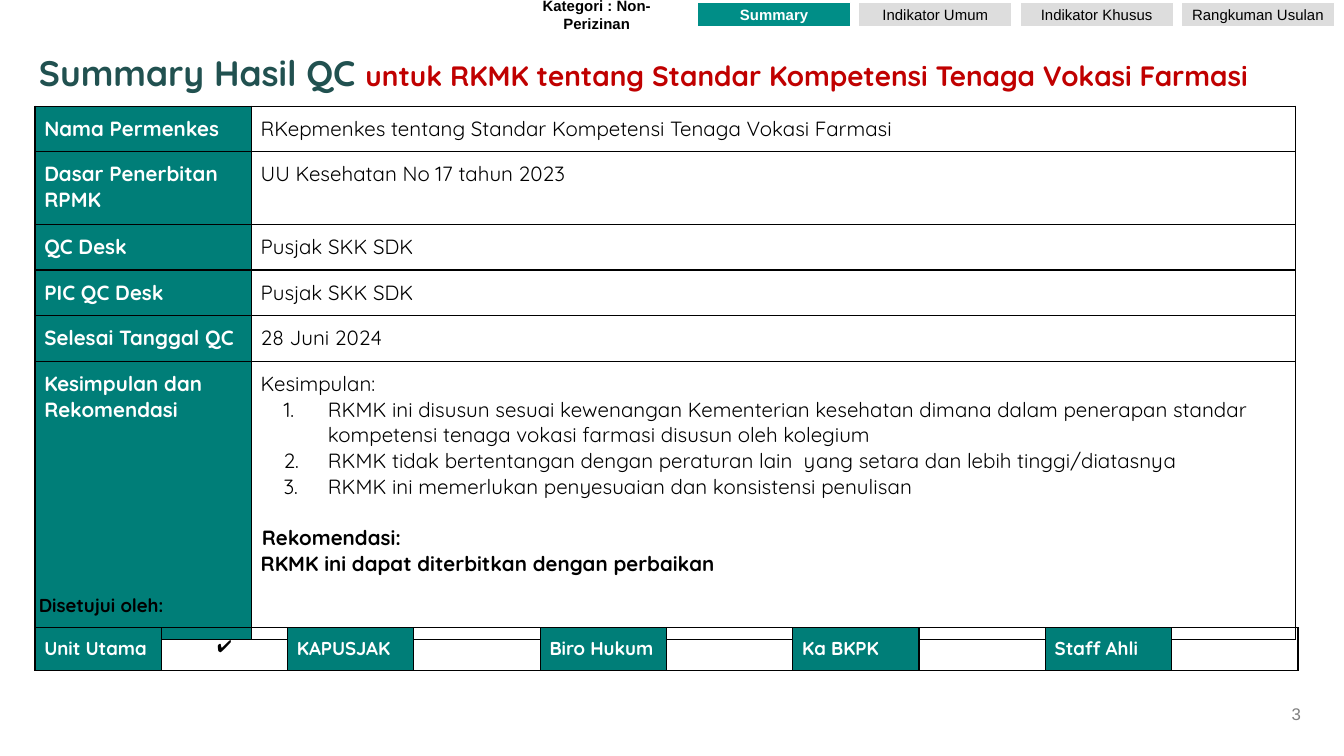
from lxml import etree
from pptx import Presentation
from pptx import util as u
from pptx.dml.color import RGBColor
from pptx.enum import shapes, text
from pptx.oxml import ns

TEAL = "007E78"
BLACK = "000000"
WHITE = "FFFFFF"
LEFT, CENTER, RIGHT = text.PP_ALIGN.LEFT, text.PP_ALIGN.CENTER, text.PP_ALIGN.RIGHT
TOP, MIDDLE, BOTTOM = (text.MSO_ANCHOR.TOP, text.MSO_ANCHOR.MIDDLE,
                       text.MSO_ANCHOR.BOTTOM)


def rgb(hex_color):
    return RGBColor.from_string(hex_color)


def add_run(paragraph, words, size=11, font="Quicksand", color=BLACK, bold=False):
    run = paragraph.add_run()
    run.text = words
    run.font.size = u.Pt(size)
    run.font.name = font
    run.font.bold = bold
    run.font.color.rgb = rgb(color)


def write(frame, words, align=LEFT, numbered=False, indent=0, before=0, **fmt):
    """Append a paragraph, filling the frame's first one if it is empty."""
    first = frame.paragraphs[0]
    paragraph = frame.add_paragraph() if first.runs else first
    paragraph.alignment = align
    if before:
        paragraph.space_before = u.Pt(before)
    props = paragraph._p.get_or_add_pPr()
    if indent:
        props.set("marL", str(u.Inches(indent)))
    if numbered:
        props.set("indent", str(u.Inches(-0.33)))
        etree.SubElement(props, ns.qn("a:buFont"), typeface="+mj-lt")
        etree.SubElement(props, ns.qn("a:buAutoNum"), type="arabicPeriod")
    add_run(paragraph, words, **fmt)
    return paragraph


def set_borders(cell):
    props = cell._tc.get_or_add_tcPr()
    for position, side in enumerate(("lnL", "lnR", "lnT", "lnB")):
        line = etree.Element(ns.qn(f"a:{side}"), w=str(u.Pt(0.75)))
        fill = etree.SubElement(line, ns.qn("a:solidFill"))
        etree.SubElement(fill, ns.qn("a:srgbClr"), val=BLACK)
        props.insert(position, line)


class SlideBuilder:
    def __init__(self, slide, inset=0.07):
        self.slide = slide
        self.inset = inset

    def frame(self, shape, anchor, vertical_inset):
        frame = shape.text_frame
        frame.word_wrap = True
        frame.vertical_anchor = anchor
        frame.margin_left = frame.margin_right = u.Inches(self.inset)
        frame.margin_top = frame.margin_bottom = u.Inches(vertical_inset)
        return frame

    def textbox(self, box, anchor=TOP, vertical_inset=0.07):
        shape = self.slide.shapes.add_textbox(*map(u.Inches, box))
        return self.frame(shape, anchor, vertical_inset)

    def tab(self, box, label, active=False):
        shape = self.slide.shapes.add_shape(
            shapes.MSO_SHAPE.RECTANGLE, *map(u.Inches, box))
        shape.shadow.inherit = False
        shape.fill.solid()
        shape.fill.fore_color.rgb = rgb("008E87" if active else "DDDDDD")
        shape.line.color.rgb = rgb(WHITE)
        shape.line.width = u.Pt(0.75)
        write(self.frame(shape, MIDDLE, self.inset), label, align=CENTER, size=8,
              font="Arial", color=WHITE if active else BLACK, bold=active)

    def table(self, left, top, widths, heights, is_label):
        """Add a bordered table whose label columns are teal."""
        table = self.slide.shapes.add_table(
            len(heights), len(widths), u.Inches(left), u.Inches(top),
            u.Inches(sum(widths)), u.Inches(sum(heights))).table
        table.first_row = table.horz_banding = False
        for column, width in zip(table.columns, widths):
            column.width = u.Inches(width)
        for row, height in zip(table.rows, heights):
            row.height = u.Inches(height)
            for index, cell in enumerate(row.cells):
                cell.margin_left = cell.margin_right = u.Inches(self.inset)
                cell.margin_top = cell.margin_bottom = u.Inches(self.inset)
                if is_label(index):
                    cell.fill.solid()
                    cell.fill.fore_color.rgb = rgb(TEAL)
                else:
                    cell.fill.background()
                set_borders(cell)
        return table


def add_summary(builder):
    facts = [
        ("Nama Permenkes",
         "RKepmenkes tentang Standar Kompetensi Tenaga Vokasi Farmasi"),
        ("Dasar Penerbitan RPMK", "UU Kesehatan No 17 tahun 2023"),
        ("QC Desk", "Pusjak SKK SDK"),
        ("PIC QC Desk", "Pusjak SKK SDK"),
        ("Selesai Tanggal QC", "28 Juni 2024"),
        ("Kesimpulan dan Rekomendasi", "Kesimpulan:"),
    ]
    conclusions = [
        "RKMK ini disusun sesuai kewenangan Kementerian kesehatan dimana dalam "
        "penerapan standar kompetensi tenaga vokasi farmasi disusun oleh kolegium",
        "RKMK tidak bertentangan dengan peraturan lain  yang setara dan lebih "
        "tinggi/diatasnya",
        "RKMK ini memerlukan penyesuaian dan konsistensi penulisan",
    ]
    table = builder.table(0.26, 0.79, [1.61, 7.77],
                          [0.34, 0.54, 0.34, 0.34, 0.34, 2.07],
                          lambda column: column == 0)
    for row, (label, value) in enumerate(facts):
        write(table.cell(row, 0).text_frame, label, color=WHITE, bold=True)
        write(table.cell(row, 1).text_frame, value)
    findings = table.cell(len(facts) - 1, 1).text_frame
    for conclusion in conclusions:
        write(findings, conclusion, numbered=True, indent=0.5)
    write(findings, "Rekomendasi:", indent=0.01, before=13.75, bold=True)
    write(findings, "RKMK ini dapat diterbitkan dengan perbaikan", bold=True)


def add_approvals(builder):
    approvers = ["Unit Utama", "KAPUSJAK", "Biro Hukum", "Ka BKPK", "Staff Ahli"]
    approved = {"Unit Utama"}
    table = builder.table(0.26, 4.67, [0.94] * (2 * len(approvers)), [0.32],
                          lambda column: column % 2 == 0)
    for index, approver in enumerate(approvers):
        write(table.cell(0, 2 * index).text_frame, approver, size=10,
              color=WHITE, bold=True)
        mark = table.cell(0, 2 * index + 1).text_frame
        if approver in approved:
            write(mark, "✔", align=CENTER, size=9, font="Arial")
        else:
            # A small end mark keeps the empty cell from stretching the row.
            etree.SubElement(mark.paragraphs[0]._p, ns.qn("a:endParaRPr"), sz="900")


def main():
    deck = Presentation()
    deck.slide_width = u.Inches(10)
    deck.slide_height = deck.slide_width * 9 // 16
    builder = SlideBuilder(deck.slides.add_slide(deck.slide_layouts[6]))

    title = write(builder.textbox((0.22, 0.14, 9.57, 0.6), BOTTOM, 0.04),
                  "Summary Hasil QC ", size=19, color="215150", bold=True)
    title.line_spacing = 0.9
    add_run(title, "untuk RKMK tentang Standar Kompetensi Tenaga Vokasi Farmasi",
            size=15, color="C00000", bold=True)
    write(builder.textbox((7.5, 5.16, 2.25, 0.3), MIDDLE, 0.04), "3",
          align=RIGHT, size=9, font="Arial", color="7F7F7F")

    write(builder.textbox((3.75, 0.02, 1.38, 0.18), MIDDLE),
          "Kategori : Non-Perizinan", align=CENTER, size=8, font="Arial", bold=True)
    tabs = ["Summary", "Indikator Umum", "Indikator Khusus", "Rangkuman Usulan"]
    for index, label in enumerate(tabs):
        builder.tab((5.19 + 1.2 * index, 0.02, 1.14, 0.18), label, active=index == 0)

    add_summary(builder)
    add_approvals(builder)
    write(builder.textbox((0.22, 4.35, 1.26, 0.32)), "Disetujui oleh:",
          size=10, bold=True)
    deck.save("out.pptx")


if __name__ == "__main__":
    main()
